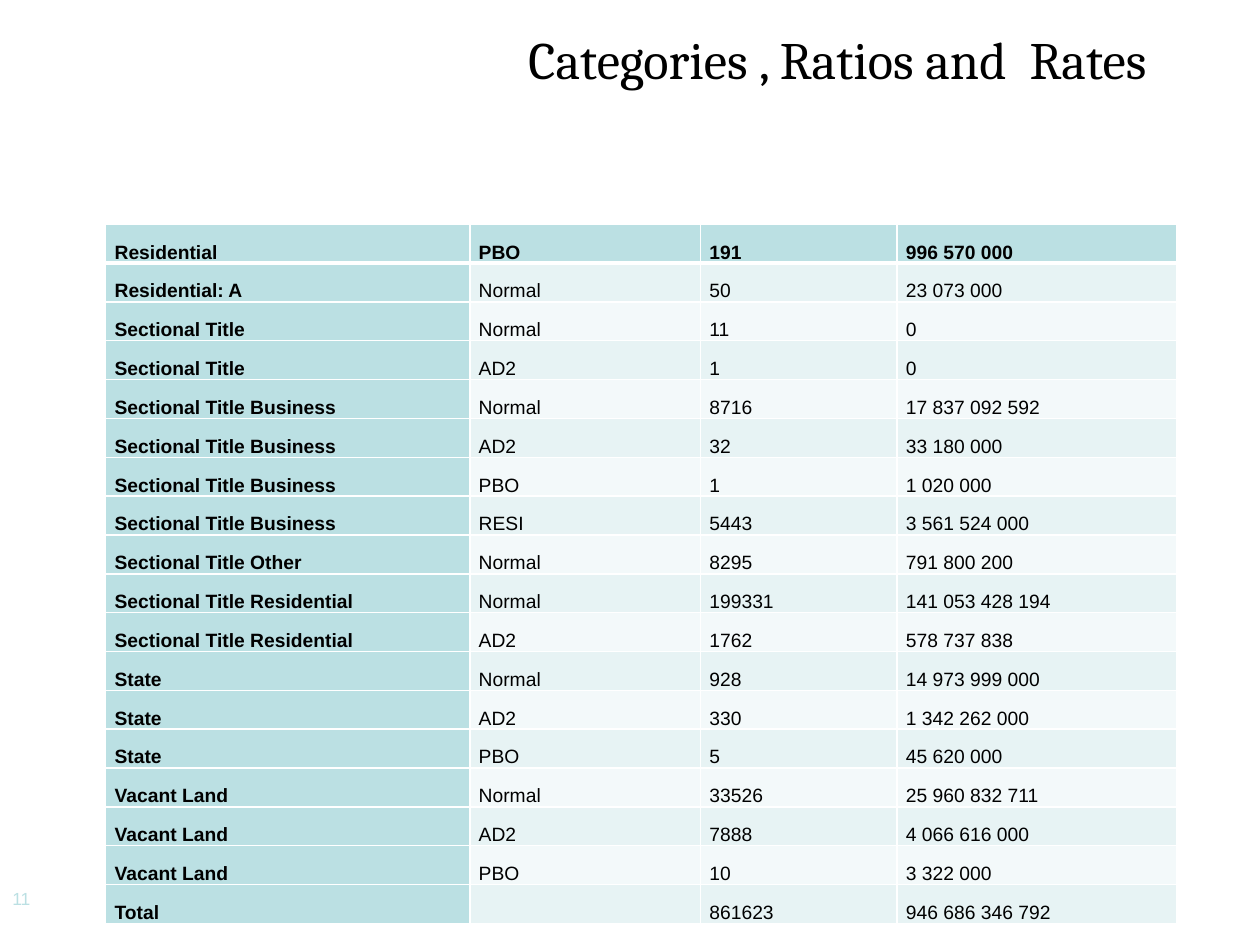
from lxml import etree
from pptx import Presentation
from pptx import util as u
from pptx.dml.color import RGBColor
from pptx.enum import text as t
from pptx.oxml.ns import qn

BLACK = RGBColor(0x00, 0x00, 0x00)
WHITE = RGBColor(0xFF, 0xFF, 0xFF)
TEAL = RGBColor(0xBB, 0xE0, 0xE3)
BANDS = RGBColor(0xF3, 0xF9, 0xFA), RGBColor(0xE7, 0xF3, 0xF4)
LEFT, RIGHT, JUST = t.PP_ALIGN.LEFT, t.PP_ALIGN.RIGHT, t.PP_ALIGN.JUSTIFY

COLS = 7.34, 4.65, 3.96, 5.64
ROWS = (
    ("Residential", "PBO", "191", "996 570 000"),
    ("Residential: A", "Normal", "50", "23 073 000"),
    ("Sectional Title", "Normal", "11", "0"),
    ("Sectional Title", "AD2", "1", "0"),
    ("Sectional Title Business", "Normal", "8716", "17 837 092 592"),
    ("Sectional Title Business", "AD2", "32", "33 180 000"),
    ("Sectional Title Business", "PBO", "1", "1 020 000"),
    ("Sectional Title Business", "RESI", "5443", "3 561 524 000"),
    ("Sectional Title Other", "Normal", "8295", "791 800 200"),
    ("Sectional Title Residential", "Normal", "199331", "141 053 428 194"),
    ("Sectional Title Residential", "AD2", "1762", "578 737 838"),
    ("State", "Normal", "928", "14 973 999 000"),
    ("State", "AD2", "330", "1 342 262 000"),
    ("State", "PBO", "5", "45 620 000"),
    ("Vacant Land", "Normal", "33526", "25 960 832 711"),
    ("Vacant Land", "AD2", "7888", "4 066 616 000"),
    ("Vacant Land", "PBO", "10", "3 322 000"),
    ("Total", "", "861623", "946 686 346 792"),
)


def write(frame, words, size=11, face="Arial", color=BLACK, bold=False,
          align=LEFT, space=None):
    """Write one formatted paragraph into a text frame."""
    para = frame.paragraphs[0]
    para.alignment = align
    para.line_spacing = space
    run = para.add_run()
    run.text = words
    font = run.font
    font.size, font.name, font.bold = u.Pt(size), face, bold
    font.color.rgb = color


def edge(cell, side, width):
    """Draw one white border of a cell."""
    line = etree.SubElement(cell._tc.get_or_add_tcPr(), qn(f"a:ln{side}"),
                            w=str(u.Pt(width)))
    fill = etree.SubElement(line, qn("a:solidFill"))
    etree.SubElement(fill, qn("a:srgbClr"), val=str(WHITE))


def title(slide, left, top, width, height):
    """Place the slide title."""
    shape = slide.shapes.title
    shape.left, shape.top = u.Cm(left), u.Cm(top)
    shape.width, shape.height = u.Cm(width), u.Cm(height)
    frame = shape.text_frame
    frame.auto_size = t.MSO_AUTO_SIZE.NONE
    frame.vertical_anchor = t.MSO_ANCHOR.TOP
    write(frame, "Categories , Ratios and  Rates ", size=30, face="Cambria",
          align=RIGHT)


def number(slide, left, top, width, height):
    """Place the page number."""
    box = slide.shapes.add_textbox(*map(u.Cm, (left, top, width, height)))
    box.text_frame.word_wrap = True
    write(box.text_frame, "11", size=10, color=TEAL)


def rates(slide, left, top, width, height):
    """Place the table of categories and values."""
    place = map(u.Cm, (left, top, width, height))
    table = slide.shapes.add_table(len(ROWS), len(COLS), *place).table
    table.first_col = True
    for col, wide in zip(table.columns, COLS):
        col.width = u.Cm(wide)
    for i, row in enumerate(ROWS):
        for j, words in enumerate(row):
            cell = table.cell(i, j)
            head = i == 0 or j == 0
            cell.margin_left = cell.margin_right = u.Cm(0.18)
            cell.margin_top = cell.margin_bottom = 0
            cell.vertical_anchor = t.MSO_ANCHOR.BOTTOM
            for side in "LRTB":
                thick = (i, side) in ((0, "B"), (1, "T"))
                edge(cell, side, 3 if thick else 1)
            cell.fill.solid()
            cell.fill.fore_color.rgb = TEAL if head else BANDS[i % 2]
            if words:
                write(cell.text_frame, words, bold=head, space=1.5,
                      align=JUST if j else LEFT)


def main():
    """Build and save the slide."""
    deck = Presentation()
    deck.slide_width, deck.slide_height = u.Cm(25.4), u.Cm(19.05)
    slide = deck.slides.add_slide(deck.slide_layouts[5])
    number(slide, 0, 17.78, 2.54, 1.27)
    title(slide, 2.67, 0.41, 20.93, 1.02)
    rates(slide, 2.13, 4.52, sum(COLS), 14.1)
    deck.save("out.pptx")


if __name__ == "__main__":
    main()
